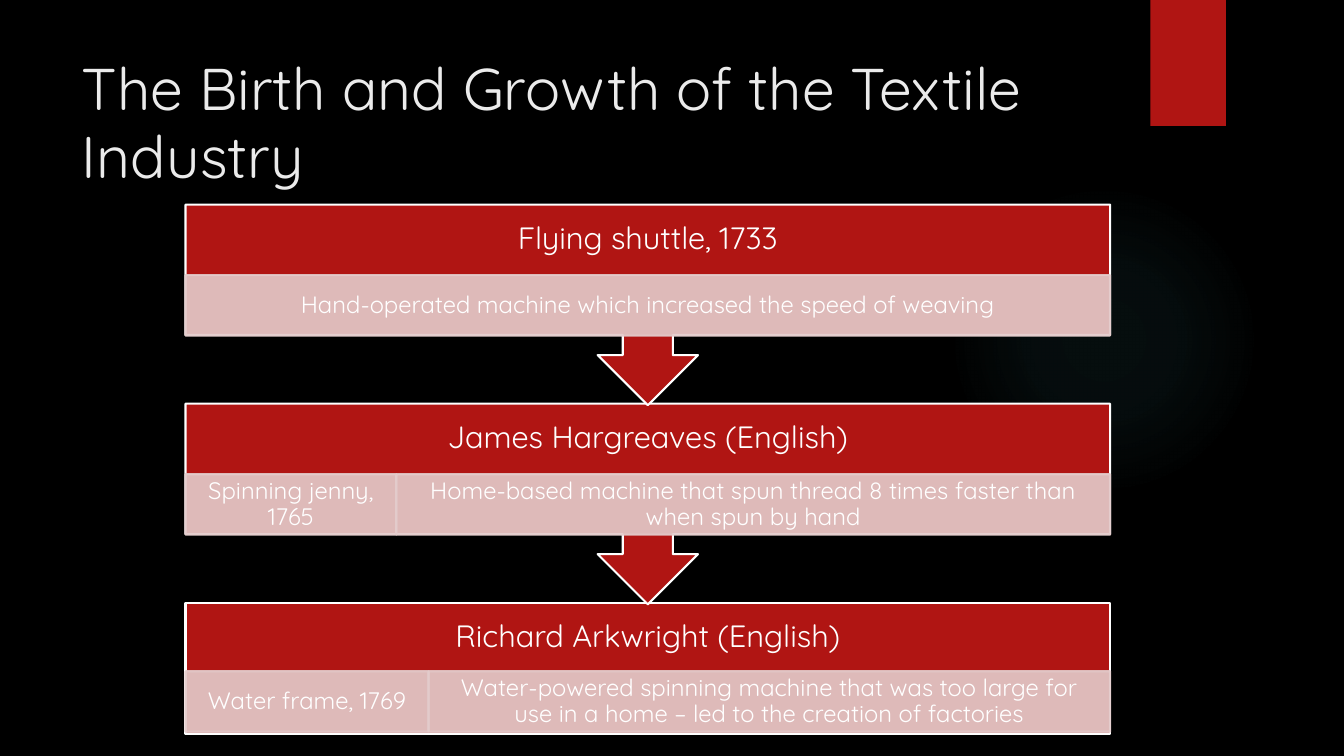
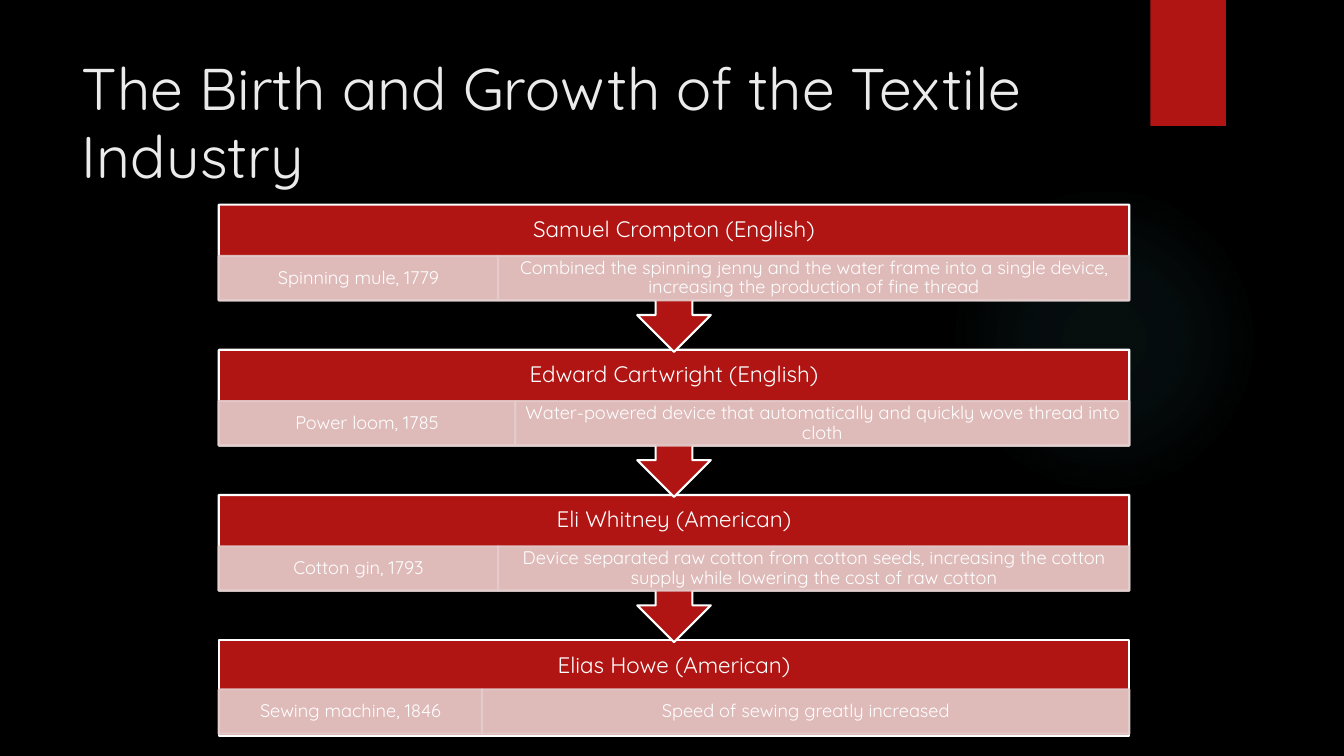
from dataclasses import dataclass

from lxml import etree
from pptx import Presentation
from pptx import util as u
from pptx.dml.color import RGBColor
from pptx.enum import shapes as sh, text as tx
from pptx.oxml import parse_xml
from pptx.oxml.ns import nsdecls, qn


@dataclass(frozen=True)
class Theme:
    back: str = "000000"
    red: str = "B01513"
    pale: str = "E4CCCC"
    white: str = "FFFFFF"
    title: str = "EBEBEB"
    glow: str = "50B9C1"
    font: str = "Quicksand"
    size: int = 42
    rule: float = 1.5


T = Theme()
GLOW = [(0, 7), (36, 6), (69, 0)]  # stop and opacity, in percent

TITLE = "The Birth and Growth of the Textile Industry"

# Each step: heading, cell texts, width of the first cell
DECK = [
    dict(
        left=1.84, wide=9.17, last=5.98, body=1.3, tall=1.99, head=0.7, cell=0.6,
        sizes=(22, 17), pads=(0.17, 0.13),
        steps=[
            ("Flying shuttle, 1733",
             ["Hand-operated machine which increased the speed of weaving"], 9.17),
            ("James Hargreaves (English)",
             ["Spinning jenny, 1765",
              "Home-based machine that spun thread 8 times faster than when spun by hand"],
             2.09),
            ("Richard Arkwright (English)",
             ["Water frame, 1769",
              "Water-powered spinning machine that was too large for use in a home"
              " – led to the creation of factories"], 2.41),
        ]),
    dict(
        left=2.17, wide=9.03, last=6.35, body=0.95, tall=1.46, head=0.51, cell=0.44,
        sizes=(16, 13), pads=(0.12, 0.1),
        steps=[
            ("Samuel Crompton (English)",
             ["Spinning mule, 1779",
              "Combined the spinning jenny and the water frame into a single device, "
              "increasing the production of fine thread"], 2.77),
            ("Edward Cartwright (English)",
             ["Power loom, 1785",
              "Water-powered device that automatically and quickly wove thread into cloth"],
             2.94),
            ("Eli Whitney (American)",
             ["Cotton gin, 1793",
              "Device separated raw cotton from cotton seeds, increasing the cotton "
              "supply while lowering the cost of raw cotton"], 2.77),
            ("Elias Howe (American)",
             ["Sewing machine, 1846", "Speed of sewing greatly increased"], 2.61),
        ]),
]
TOP = 2.03


def draw(page, kind, box, fill, line=None, alpha=None):
    """Add a flat shape; alpha (percent) applies to fill and line."""
    item = page.shapes.add_shape(kind, *map(u.Inches, box))
    item.shadow.inherit = False
    item.fill.solid()
    item.fill.fore_color.rgb = RGBColor.from_string(fill)
    if line:
        item.line.color.rgb = RGBColor.from_string(line)
        item.line.width = u.Pt(T.rule)
    else:
        item.line.fill.background()
    if alpha:
        for tone in item.element.spPr.iter(qn("a:srgbClr")):
            etree.SubElement(tone, qn("a:alpha")).set("val", str(alpha * 1000))
    return item


def write(item, words, size, color, pads, align, anchor, space):
    """Fill a shape with one formatted paragraph; pads are side and top insets."""
    frame = item.text_frame
    frame.text = words
    side, edge = map(u.Inches, pads)
    form = dict(word_wrap=True, auto_size=tx.MSO_AUTO_SIZE.NONE, vertical_anchor=anchor,
                margin_left=side, margin_right=side, margin_top=edge, margin_bottom=edge)
    for key, val in form.items():
        setattr(frame, key, val)
    para = frame.paragraphs[0]
    para.alignment, para.line_spacing = align, space
    font = para.runs[0].font
    font.name, font.size = T.font, u.Pt(size)
    font.color.rgb = RGBColor.from_string(color)


prs = Presentation()
prs.slide_width, prs.slide_height = u.Inches(13.33), u.Inches(7.5)
back = prs.slide_master.background.fill
back.solid()
back.fore_color.rgb = RGBColor.from_string(T.back)

MID = (tx.PP_ALIGN.CENTER, tx.MSO_ANCHOR.MIDDLE, 0.9)
kinds = sh.MSO_SHAPE

for plan in DECK:
    page = prs.slides.add_slide(prs.slide_layouts[5])

    # Soft glow and corner tab
    orb = draw(page, kinds.OVAL, (9.41, 1.83, 3.08, 3.08), T.glow)
    stops = "".join(
        f'<a:gs pos="{pos * 1000}"><a:srgbClr val="{T.glow}">'
        f'<a:alpha val="{alpha * 1000}"/></a:srgbClr></a:gs>' for pos, alpha in GLOW)
    grad = parse_xml(
        f'<a:gradFill {nsdecls("a")}><a:gsLst>{stops}</a:gsLst><a:path path="circle">'
        '<a:fillToRect l="50000" t="50000" r="50000" b="50000"/></a:path></a:gradFill>')
    flat = orb.element.spPr.find(qn("a:solidFill"))
    orb.element.spPr.replace(flat, grad)
    draw(page, kinds.RECTANGLE, (11.41, 0, 0.75, 1.25), T.red)

    # Title
    head = page.shapes.title
    spots = dict(left=0.71, top=0.5, width=10.29, height=1.53)
    for key, val in spots.items():
        setattr(head, key, u.Inches(val))
    write(head, TITLE, T.size, T.title, (0.1, 0.05),
          tx.PP_ALIGN.LEFT, tx.MSO_ANCHOR.TOP, 0.97)

    # Steps, lowest first so that each arrow tip lies over the next box
    left, wide = plan["left"], plan["wide"]
    big, small = plan["sizes"]
    pad, side = plan["pads"]
    end = len(plan["steps"]) - 1
    pitch = (plan["last"] - TOP) / end
    for i, (name, cells, split) in reversed(list(enumerate(plan["steps"]))):
        top = TOP + i * pitch
        row = top + plan["head"]
        if i == end:
            row -= 0.02
            draw(page, kinds.RECTANGLE, (left, top, wide, plan["body"]), T.red, T.white)
        else:
            call = draw(page, kinds.UP_ARROW_CALLOUT, (left, top, wide, plan["tall"]),
                        T.red, T.white)
            call.rotation = 180
            call.adjustments[3] = 0.65
        label = page.shapes.add_textbox(
            *map(u.Inches, (left, top, wide, plan["head"])))
        write(label, name, big, T.white, (pad, pad), *MID)

        # Detail cells
        spans = [(left, split), (left + split, wide - split)]
        for words, (x, w) in zip(cells, spans):
            cell = draw(page, kinds.RECTANGLE, (x, row, w, plan["cell"]),
                        T.pale, T.pale, 90)
            write(cell, words, small, T.white, (side, 0.02), *MID)

prs.save("out.pptx")
